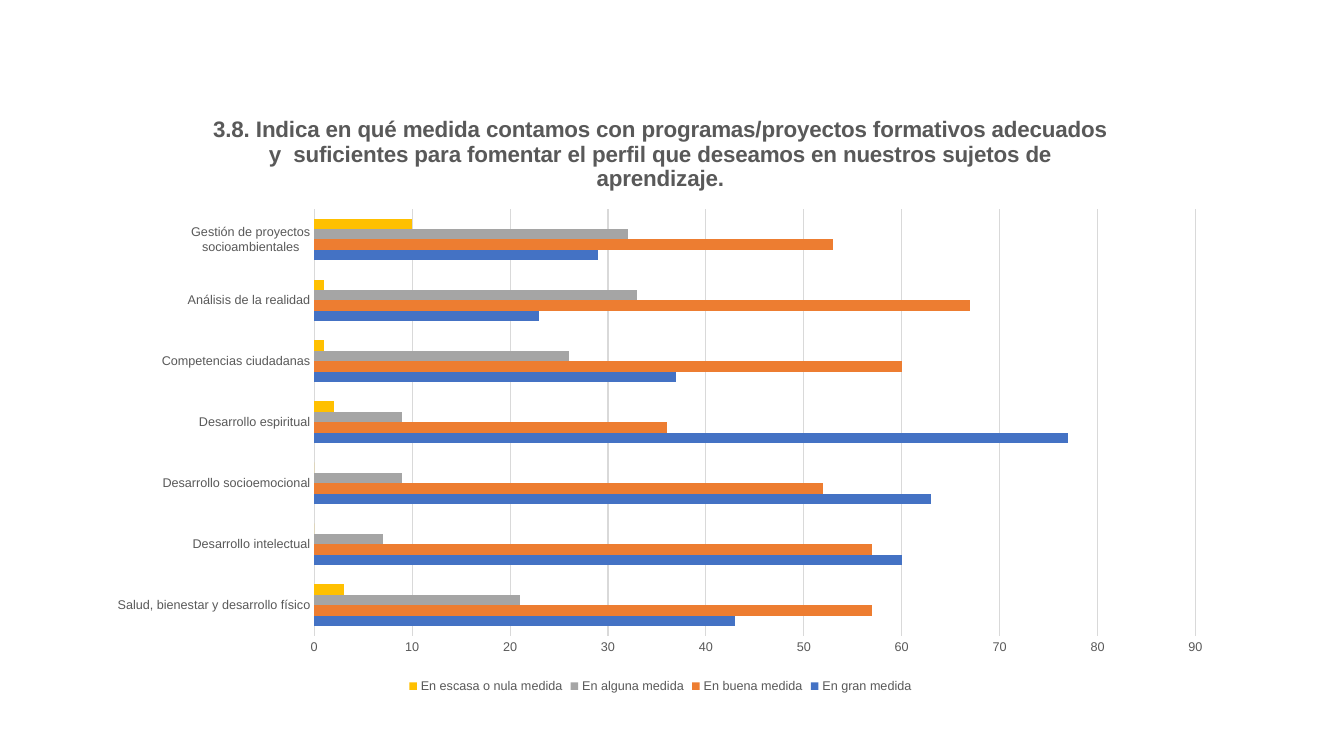
import pptx
import pptx.chart.data
import pptx.dml.color
import pptx.enum.chart
import pptx.util
from lxml import etree

Inches = pptx.util.Inches
Pt = pptx.util.Pt
RGBColor = pptx.dml.color.RGBColor

TEXT_GRAY = RGBColor(0x59, 0x59, 0x59)
LINE_GRAY = RGBColor(0xD9, 0xD9, 0xD9)
BLUE = RGBColor(0x44, 0x72, 0xC4)
ORANGE = RGBColor(0xED, 0x7D, 0x31)
GRAY = RGBColor(0xA5, 0xA5, 0xA5)
YELLOW = RGBColor(0xFF, 0xC0, 0x00)
FONT = "Arial"

TITLE = (
    "3.8. Indica en qué medida contamos con programas/proyectos formativos adecuados "
    "y  suficientes para fomentar el perfil que deseamos en nuestros sujetos de aprendizaje."
)
PROGRAMS = [
    "Salud, bienestar y desarrollo físico",
    "Desarrollo intelectual",
    "Desarrollo socioemocional",
    "Desarrollo espiritual",
    "Competencias ciudadanas",
    "Análisis de la realidad",
    "Gestión de proyectos socioambientales",
]
ANSWERS = [
    ("En gran medida", BLUE, (43, 60, 63, 77, 37, 23, 29)),
    ("En buena medida", ORANGE, (57, 57, 52, 36, 60, 67, 53)),
    ("En alguna medida", GRAY, (21, 7, 9, 9, 26, 33, 32)),
    ("En escasa o nula medida", YELLOW, (3, 0, 0, 2, 1, 1, 10)),
]


def style_font(font, size, bold=False):
    font.name = FONT
    font.size = Pt(size)
    font.bold = bold
    font.color.rgb = TEXT_GRAY


def style_line(line):
    line.color.rgb = LINE_GRAY
    line.width = Pt(0.75)


def set_plot_area(chart, x, y, w, h):
    """Fix the inner plot area, in fractions of the chart frame."""
    plot_area = chart.plots[0]._element.getparent()
    namespace = etree.QName(plot_area).namespace
    for old in plot_area.findall(f"{{{namespace}}}layout"):
        plot_area.remove(old)
    layout = etree.Element(f"{{{namespace}}}layout")
    manual = etree.SubElement(layout, f"{{{namespace}}}manualLayout")
    settings = [("layoutTarget", "inner"), ("xMode", "edge"), ("yMode", "edge"),
                ("x", x), ("y", y), ("w", w), ("h", h)]
    for name, value in settings:
        etree.SubElement(manual, f"{{{namespace}}}{name}").set("val", str(value))
    plot_area.insert(0, layout)


def add_survey_chart(page, left, top, width, height):
    data = pptx.chart.data.CategoryChartData()
    data.categories = PROGRAMS
    for name, color, values in ANSWERS:
        data.add_series(name, values)
    chart = page.shapes.add_chart(
        pptx.enum.chart.XL_CHART_TYPE.BAR_CLUSTERED,
        Inches(left), Inches(top), Inches(width), Inches(height), data).chart
    style_font(chart.font, 10)

    # Title
    chart.has_title = True
    para = chart.chart_title.text_frame.paragraphs[0]
    para.text = TITLE
    style_font(para.runs[0].font, 16, bold=True)
    chart.chart_title.include_in_layout = False

    # Bars
    plot = chart.plots[0]
    plot.gap_width = 182
    plot.overlap = 0
    plot.vary_by_categories = False
    for series, (name, color, values) in zip(plot.series, ANSWERS):
        series.format.fill.solid()
        series.format.fill.fore_color.rgb = color
    set_plot_area(chart, 0.194, 0.191, 0.779, 0.707)

    # Axes
    for axis in (chart.category_axis, chart.value_axis):
        axis.major_tick_mark = pptx.enum.chart.XL_TICK_MARK.NONE
        axis.minor_tick_mark = pptx.enum.chart.XL_TICK_MARK.NONE
        style_font(axis.tick_labels.font, 9)
    style_line(chart.category_axis.format.line)
    values_axis = chart.value_axis
    values_axis.minimum_scale = 0
    values_axis.maximum_scale = 90
    values_axis.major_unit = 10
    values_axis.format.line.fill.background()
    values_axis.has_major_gridlines = True
    style_line(values_axis.major_gridlines.format.line)

    # Legend
    chart.has_legend = True
    chart.legend.position = pptx.enum.chart.XL_LEGEND_POSITION.BOTTOM
    chart.legend.include_in_layout = False
    style_font(chart.legend.font, 9)


def main():
    deck = pptx.Presentation()
    deck.slide_width = Inches(13.33)
    deck.slide_height = Inches(7.5)
    page = deck.slides.add_slide(deck.slide_layouts[6])
    add_survey_chart(page, 0.94, 0.93, 11.22, 5.99)
    deck.save("out.pptx")


if __name__ == "__main__":
    main()
